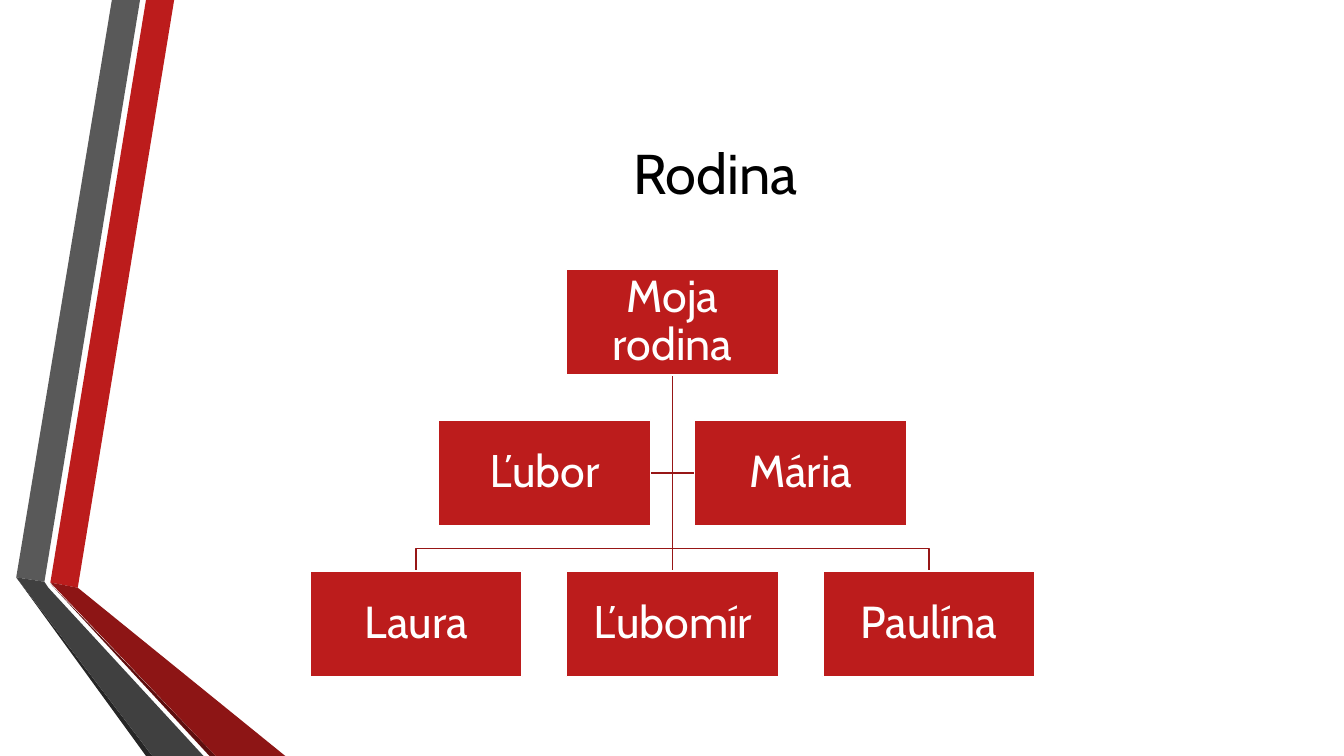
from pptx import Presentation, util as u
from pptx.dml import color
from pptx.enum import shapes, text
from pptx.oxml import xmlchemy
from pptx.oxml.ns import qn
from lxml import etree

WIDTH, HEIGHT = 33.87, 19.05
RED, DARK_RED, WHITE, BLACK = "BC1C1C", "971616", "FFFFFF", "000000"
BOX_WIDTH, BOX_HEIGHT = 5.35, 2.67
CENTER, TREE_TOP = 16.95, 6.78
COLUMN_STEP, ROW_STEP = 6.46, 3.8

RIBBONS = [
    (RED, [(1.27, 14.68), (1.96, 14.81), (4.39, 0), (3.68, 0)]),
    ("595959", [(3.53, 0), (2.82, 0), (0.41, 14.55), (1.12, 14.66)]),
    ("262626", [(0.41, 14.55), (3.68, HEIGHT), (3.84, HEIGHT)]),
    ("5E0E0E", [(1.27, 14.71), (5.28, HEIGHT), (5.44, HEIGHT)]),
    ("8D1515", [(1.27, 14.68), (5.44, HEIGHT), (7.19, HEIGHT), (1.96, 14.81)]),
    ("404040", [(5.13, HEIGHT), (1.22, 14.81), (1.12, 14.66), (0.41, 14.55), (3.84, HEIGHT)]),
]
FAMILY = [
    ("Moja rodina", 0, 0),
    ("Laura", -1, 2),
    ("Ľubomír", 0, 2),
    ("Paulína", 1, 2),
    ("Ľubor", -0.5, 1),
    ("Mária", 0.5, 1),
]


def rgb(value):
    return color.RGBColor.from_string(value)


def write(shape, words, size=32, ink=WHITE, spacing=0.9, inset=0.05):
    frame = shape.text_frame
    frame.word_wrap = True
    frame.auto_size = text.MSO_AUTO_SIZE.NONE
    frame.vertical_anchor = text.MSO_ANCHOR.MIDDLE
    frame.margin_left = frame.margin_right = u.Cm(inset)
    frame.margin_top = frame.margin_bottom = u.Cm(inset)
    paragraph = frame.paragraphs[0]
    paragraph.alignment = text.PP_ALIGN.CENTER
    paragraph.line_spacing = spacing
    run = paragraph.add_run()
    run.text = words
    run.font.name = "Cabin"
    run.font.size = u.Pt(size)
    run.font.color.rgb = rgb(ink)


class FamilySlide:
    """Hold the line style and the current slide, and draw its elements."""

    def __init__(self, slide, line_width=1.25):
        self.slide = slide
        self.line_width = u.Pt(line_width)

    def paint(self, shape, fill=None, line=None):
        shape.shadow.inherit = False
        if fill:
            shape.fill.solid()
            shape.fill.fore_color.rgb = rgb(fill)
        else:
            shape.fill.background()
        if line:
            shape.line.color.rgb = rgb(line)
            shape.line.width = self.line_width
        else:
            shape.line.fill.background()

    def title(self, words, left, top, width, height):
        shape = self.slide.shapes.title
        shape.left, shape.top = u.Cm(left), u.Cm(top)
        shape.width, shape.height = u.Cm(width), u.Cm(height)
        write(shape, words, size=40, ink=BLACK, spacing=1, inset=0.13)

    def outline(self, points, fill=None, line=None):
        corners = [(u.Cm(x), u.Cm(y)) for x, y in points]
        builder = self.slide.shapes.build_freeform(*corners[0])
        builder.add_line_segments(corners[1:], close=fill is not None)
        self.paint(builder.convert_to_shape(), fill, line)

    def line(self, x1, y1, x2, y2):
        connector = self.slide.shapes.add_connector(
            shapes.MSO_CONNECTOR.STRAIGHT, u.Cm(x1), u.Cm(y1), u.Cm(x2), u.Cm(y2))
        connector.line.color.rgb = rgb(DARK_RED)
        connector.line.width = self.line_width
        etree.SubElement(connector._element.spPr, qn("a:effectLst"))

    def box(self, words, column, row):
        shape = self.slide.shapes.add_shape(
            shapes.MSO_SHAPE.RECTANGLE,
            u.Cm(CENTER + column * COLUMN_STEP - BOX_WIDTH / 2),
            u.Cm(TREE_TOP + row * ROW_STEP),
            u.Cm(BOX_WIDTH), u.Cm(BOX_HEIGHT))
        self.paint(shape, RED, WHITE)
        write(shape, words)


def main():
    presentation = Presentation()
    presentation.slide_width, presentation.slide_height = u.Cm(WIDTH), u.Cm(HEIGHT)
    family = FamilySlide(presentation.slides.add_slide(presentation.slide_layouts[5]))

    for fill, points in RIBBONS:
        family.outline(points, fill=fill)
    family.title("Rodina", 4.11, 1.9, 27.84, 4.88)

    gap = COLUMN_STEP - BOX_WIDTH
    trunk_top = TREE_TOP + BOX_HEIGHT
    parents_middle = TREE_TOP + ROW_STEP + BOX_HEIGHT / 2
    children_top = TREE_TOP + 2 * ROW_STEP
    bus = children_top - gap / 2
    family.line(CENTER, trunk_top, CENTER, children_top)
    for side in (1, -1):
        parent_edge = CENTER + side * gap / 2
        child = CENTER + side * COLUMN_STEP
        family.outline([(CENTER, trunk_top), (CENTER, parents_middle),
                        (parent_edge, parents_middle)], line=DARK_RED)
        family.outline([(CENTER, trunk_top), (CENTER, bus), (child, bus),
                        (child, children_top)], line=DARK_RED)

    for name, column, row in FAMILY:
        family.box(name, column, row)
    presentation.save("out.pptx")


if __name__ == "__main__":
    main()
